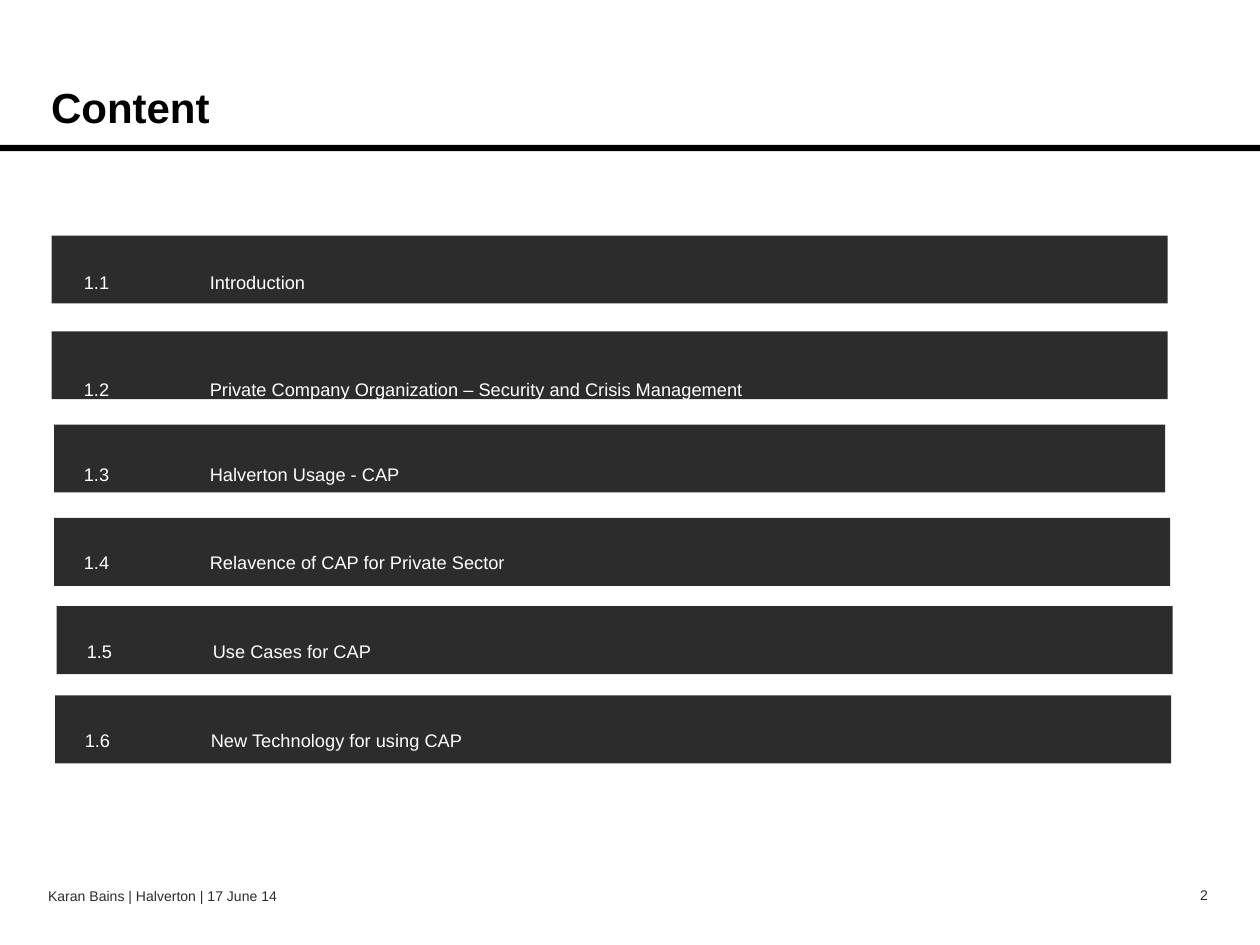
from lxml import etree
from pptx import Presentation
from pptx.dml.color import RGBColor
from pptx.enum.shapes import MSO_SHAPE
from pptx.enum.text import MSO_ANCHOR, PP_ALIGN
from pptx.oxml.ns import qn
from pptx.util import Cm, Pt

RECTANGLE = MSO_SHAPE.RECTANGLE
TOP, MIDDLE, BOTTOM = MSO_ANCHOR.TOP, MSO_ANCHOR.MIDDLE, MSO_ANCHOR.BOTTOM
LEFT, RIGHT = PP_ALIGN.LEFT, PP_ALIGN.RIGHT
BLACK = RGBColor(0x00, 0x00, 0x00)
CHARCOAL = RGBColor(0x2C, 0x2C, 0x2C)
WHITE = RGBColor(0xFF, 0xFF, 0xFF)
TOPIC_INDENT = Cm(2.54)

presentation = Presentation()
presentation.slide_width = Cm(25.4)
presentation.slide_height = Cm(19.05)
slide = presentation.slides.add_slide(presentation.slide_layouts[6])


def add_bar(left, top, width, height, color):
    bar = slide.shapes.add_shape(RECTANGLE, Cm(left), Cm(top), Cm(width), Cm(height))
    bar.shadow.inherit = False
    bar.fill.solid()
    bar.fill.fore_color.rgb = color
    bar.line.fill.background()


def add_text(text, left, top, width, height, size, color, anchor=TOP, align=LEFT):
    frame = slide.shapes.add_textbox(Cm(left), Cm(top), Cm(width), Cm(height)).text_frame
    frame.word_wrap = True
    frame.vertical_anchor = anchor
    paragraph = frame.paragraphs[0]
    paragraph.text = text
    paragraph.alignment = align
    if "\t" in text:
        paragraph.line_spacing = 0.85
        tabs = etree.SubElement(paragraph._p.get_or_add_pPr(), qn("a:tabLst"))
        etree.SubElement(tabs, qn("a:tab"), pos=str(TOPIC_INDENT), algn="l")
    paragraph.font.name = "Arial"
    paragraph.font.size = Pt(size)
    paragraph.font.color.rgb = color
    return frame


add_bar(0, 2.92, 25.48, 0.13, BLACK)

title = add_text("Content", 1.03, 0.34, 20.19, 2.31, 24, BLACK, BOTTOM)
title.margin_left = title.margin_top = title.margin_right = title.margin_bottom = 0
title.paragraphs[0].font.bold = True

agenda = [
    ("Introduction", 1.04, 4.75, 22.5, 1.44, 4.65),
    ("Private Company Organization – Security and Crisis Management",
     1.04, 6.68, 22.5, 1.44, 6.81),
    ("Halverton Usage - CAP", 1.09, 8.56, 22.4, 1.44, 8.51),
    ("Relavence of CAP for Private Sector", 1.09, 10.44, 22.5, 1.44, 10.29),
    ("Use Cases for CAP", 1.14, 12.22, 22.5, 1.5, 12.09),
    ("New Technology for using CAP", 1.11, 14.02, 22.5, 1.46, 13.87),
]
for number, (topic, bar_left, bar_top, bar_width, topic_left, topic_top) in enumerate(agenda, 1):
    add_bar(bar_left, bar_top, bar_width, 1.37, CHARCOAL)
    entry = add_text(f"1.{number}\t{topic}", topic_left, topic_top, 22.56, 1.63,
                     10.4, WHITE, MIDDLE)
    entry.margin_top = Cm(0.65)

add_text("Karan Bains | Halverton | 17 June 14", 0.72, 17.77, 19, 0.38, 8, CHARCOAL)
add_text("2", 17.67, 17.75, 6.93, 0.36, 8, CHARCOAL, align=RIGHT)

presentation.save("out.pptx")
